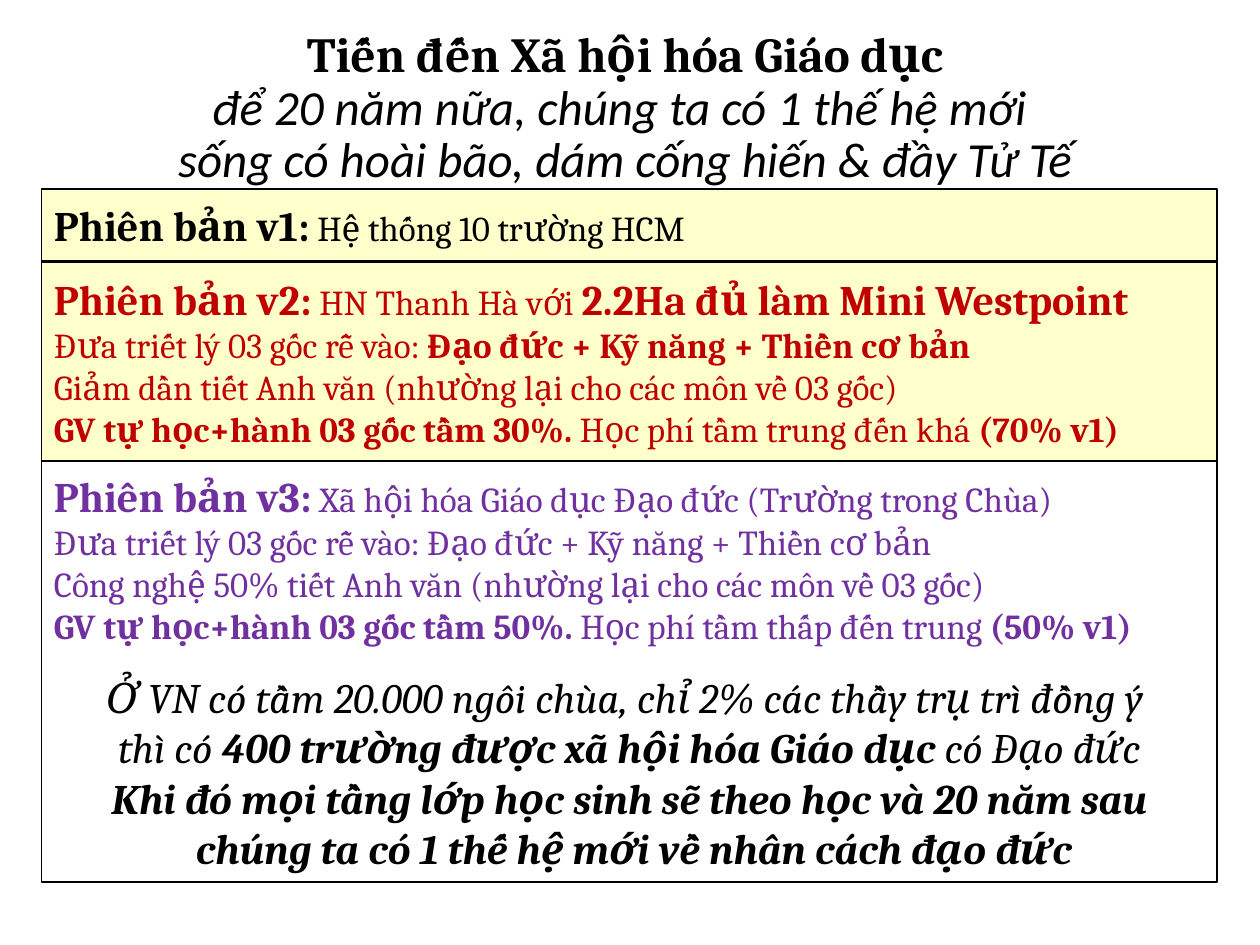
"""Build a slide on three versions of socialised education."""
import pptx
import pptx.dml.color
import pptx.enum.shapes
import pptx.enum.text
import pptx.util

Inches = pptx.util.Inches
Pt = pptx.util.Pt
ALIGN = pptx.enum.text.PP_ALIGN
ANCHOR = pptx.enum.text.MSO_ANCHOR
BLACK, RED, PURPLE, CREAM = "000000", "C00000", "7030A0", "FFFFCC"


def rgb(value):
    return pptx.dml.color.RGBColor.from_string(value)


def add_text(p, text, size=20, bold=False, italic=False, color=BLACK, font="Cambria"):
    for i, line in enumerate(text.split("\n")):
        if i:
            p.add_line_break()
        if line:
            r = p.add_run()
            r.text = line
            r.font.name = font
            r.font.size = Pt(size)
            r.font.bold = bold
            r.font.italic = italic
            r.font.color.rgb = rgb(color)


class Deck:
    def __init__(self):
        self.prs = pptx.Presentation()
        self.prs.slide_width = Inches(10)
        self.prs.slide_height = Inches(7.5)
        self.s = self.prs.slides.add_slide(self.prs.slide_layouts[6])

    def heading(self, left, top, width, height):
        sp = self.s.shapes.add_textbox(Inches(left), Inches(top), Inches(width), Inches(height))
        tf = sp.text_frame
        tf.word_wrap = True
        tf.auto_size = pptx.enum.text.MSO_AUTO_SIZE.SHAPE_TO_FIT_TEXT
        return tf

    def panel(self, top, height, fill=None):
        sp = self.s.shapes.add_shape(
            pptx.enum.shapes.MSO_SHAPE.RECTANGLE,
            Inches(0.33), Inches(top), Inches(9.33), Inches(height))
        sp.shadow.inherit = False
        if fill:
            sp.fill.solid()
            sp.fill.fore_color.rgb = rgb(fill)
        else:
            sp.fill.background()
        sp.line.color.rgb = rgb(BLACK)
        sp.line.width = Pt(1)
        tf = sp.text_frame
        tf.word_wrap = True
        tf.vertical_anchor = ANCHOR.MIDDLE
        return tf

    def paragraph(self, tf, runs, first=True, align=ALIGN.LEFT, **style):
        p = tf.paragraphs[0] if first else tf.add_paragraph()
        p.alignment = align
        for text, extra in runs:
            add_text(p, text, **{**style, **extra})
        return p


def main():
    bold, lead = {"bold": True}, {"bold": True, "size": 24}
    deck = Deck()

    tf = deck.panel(1.5, 0.57, CREAM)
    deck.paragraph(tf, [("Phiên bản v1:", lead), (" Hệ thống 10 trường HCM", {})])

    tf = deck.panel(2.08, 1.58, CREAM)
    deck.paragraph(tf, [
        ("Phiên bản v2:", lead),
        (" HN Thanh Hà với ", {}),
        ("2.2Ha đủ làm Mini Westpoint\n", lead),
        ("Đưa triết lý 03 gốc rễ vào: ", {}),
        ("Đạo đức + Kỹ năng + Thiền cơ bản\n", bold),
        ("Giảm dần tiết Anh văn (nhường lại cho các môn về 03 gốc)\n", {}),
        ("GV tự học+hành 03 gốc tầm 30%. ", bold),
        ("Học phí tầm trung đến khá ", {}),
        ("(70% v1)", bold),
    ], color=RED)

    tf = deck.panel(3.66, 3.34)
    deck.paragraph(tf, [
        ("Phiên bản v3:", lead),
        (" Xã hội hóa Giáo dục Đạo đức (Trường trong Chùa)\n"
         "Đưa triết lý 03 gốc rễ vào: Đạo đức + Kỹ năng + Thiền cơ bản\n"
         "Công nghệ 50% tiết Anh văn (nhường lại cho các môn về 03 gốc)\n", {}),
        ("GV tự học+hành 03 gốc tầm 50%. ", bold),
        ("Học phí tầm thấp đến trung ", {}),
        ("(50% v1)", bold),
    ], color=PURPLE)
    p = deck.paragraph(tf, [
        ("Ở VN có tầm 20.000 ngôi chùa, chỉ 2% các thầy trụ trì đồng ý \nthì có ", {}),
        ("400 trường được xã hội hóa Giáo dục ", bold),
        ("có Đạo đức\n", {}),
        ("Khi đó mọi tầng lớp học sinh sẽ theo học và 20 năm sau\n"
         " chúng ta có 1 thế hệ mới về nhân cách đạo đức", bold),
    ], first=False, align=ALIGN.CENTER, size=24, italic=True)
    p.space_before = Pt(14)

    tf = deck.heading(1, 0.14, 7.92, 1.42)
    deck.paragraph(tf, [("Tiến đến Xã hội hóa Giáo dục", bold)], align=ALIGN.CENTER, size=28)
    p = deck.paragraph(tf, [
        ("để 20 năm nữa, chúng ta có 1 thế hệ mới \n"
         "sống có hoài bão, dám cống hiến & đầy Tử Tế", {}),
    ], first=False, align=ALIGN.CENTER, size=28, italic=True, font="Calibri")
    p.line_spacing = 0.9

    deck.prs.save("out.pptx")


if __name__ == "__main__":
    main()
